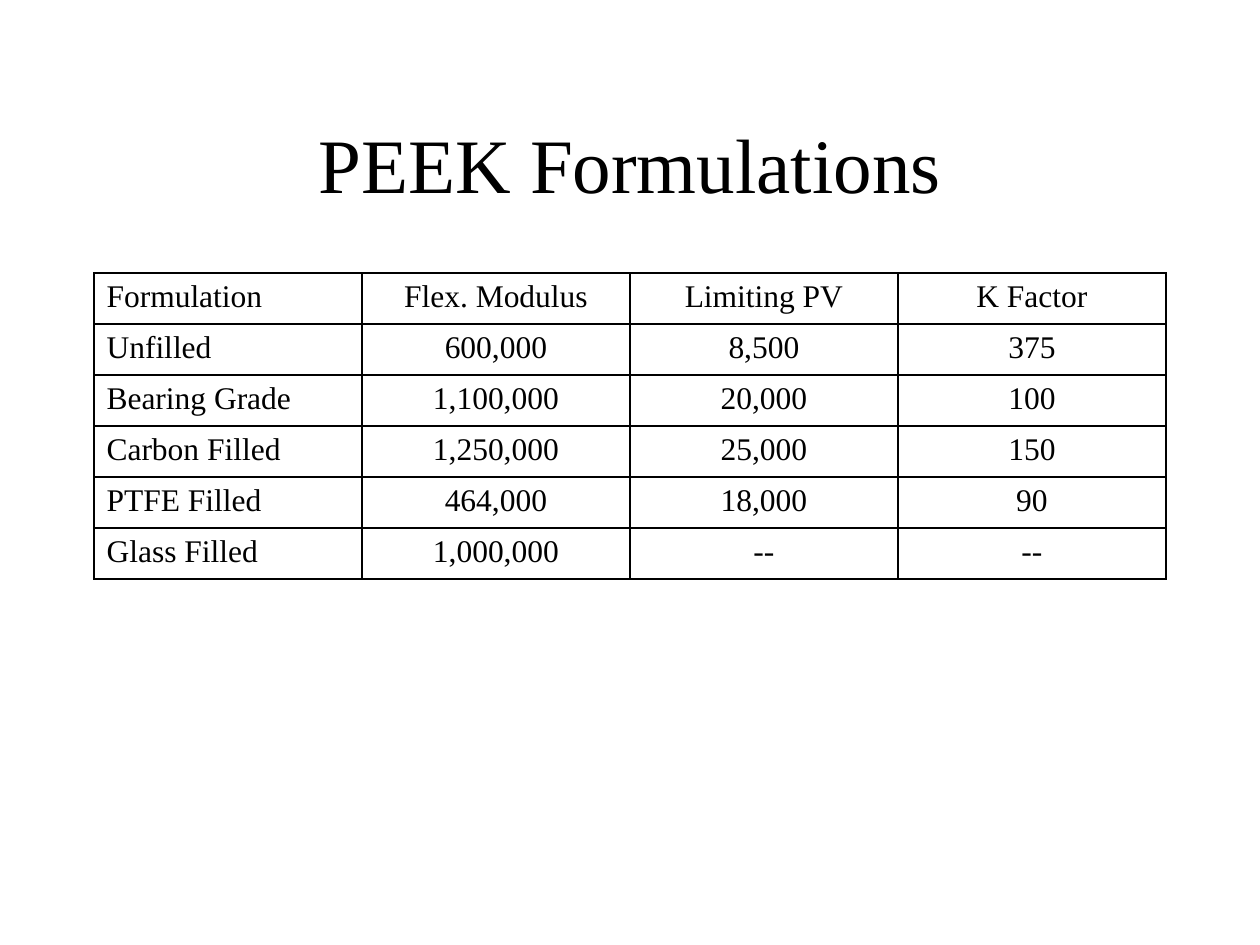
"""Build the PEEK formulations slide: a centred title over a ruled table."""
import lxml.etree
import pptx
import pptx.dml.color
import pptx.enum.text
import pptx.oxml.ns
import pptx.util

TITLE = "PEEK Formulations"
FORMULATIONS = [
    ("Formulation", "Flex. Modulus", "Limiting PV", "K Factor"),
    ("Unfilled", "600,000", "8,500", "375"),
    ("Bearing Grade", "1,100,000", "20,000", "100"),
    ("Carbon Filled", "1,250,000", "25,000", "150"),
    ("PTFE Filled", "464,000", "18,000", "90"),
    ("Glass Filled", "1,000,000", "--", "--"),
]

FONT = "Times New Roman"
BLACK = pptx.dml.color.RGBColor(0x00, 0x00, 0x00)
PX = pptx.util.Inches(1) // 126
SLIDE_W, SLIDE_H = 1260, 945
TITLE_BOX = (94, 84, 1072, 158)
TABLE_LEFT, TABLE_TOP = 94, 273
COLUMN_W, ROW_H = 268, 51
BORDER_PT = 1
ALIGN = pptx.enum.text.PP_ALIGN


def write(frame, text, size, alignment):
    paragraph = frame.paragraphs[0]
    paragraph.alignment = alignment
    run = paragraph.add_run()
    run.text = text
    run.font.name = FONT
    run.font.size = pptx.util.Pt(size)
    run.font.color.rgb = BLACK


def add_borders(cell):
    qn = pptx.oxml.ns.qn
    properties = cell._tc.get_or_add_tcPr()
    for side in ("a:lnL", "a:lnR", "a:lnT", "a:lnB"):
        line = lxml.etree.SubElement(properties, qn(side), w=str(pptx.util.Pt(BORDER_PT)))
        fill = lxml.etree.SubElement(line, qn("a:solidFill"))
        lxml.etree.SubElement(fill, qn("a:srgbClr"), val=str(BLACK))


def add_title(slide):
    frame = slide.shapes.add_textbox(*(PX * length for length in TITLE_BOX)).text_frame
    frame.word_wrap = True
    frame.vertical_anchor = pptx.enum.text.MSO_ANCHOR.MIDDLE
    write(frame, TITLE, 44, ALIGN.CENTER)


def add_formulations(slide):
    row_count, column_count = len(FORMULATIONS), len(FORMULATIONS[0])
    bounds = (TABLE_LEFT, TABLE_TOP, COLUMN_W * column_count, ROW_H * row_count)
    table = slide.shapes.add_table(
        row_count, column_count, *(PX * length for length in bounds)
    ).table
    table.first_row = False
    table.horz_banding = False
    for r, formulation in enumerate(FORMULATIONS):
        for c, value in enumerate(formulation):
            cell = table.cell(r, c)
            write(cell.text_frame, value, 18, ALIGN.CENTER if c else ALIGN.LEFT)
            add_borders(cell)
            cell.fill.background()


def main():
    presentation = pptx.Presentation()
    presentation.slide_width = PX * SLIDE_W
    presentation.slide_height = PX * SLIDE_H
    slide = presentation.slides.add_slide(presentation.slide_layouts[6])
    add_title(slide)
    add_formulations(slide)
    presentation.save("out.pptx")


if __name__ == "__main__":
    main()
